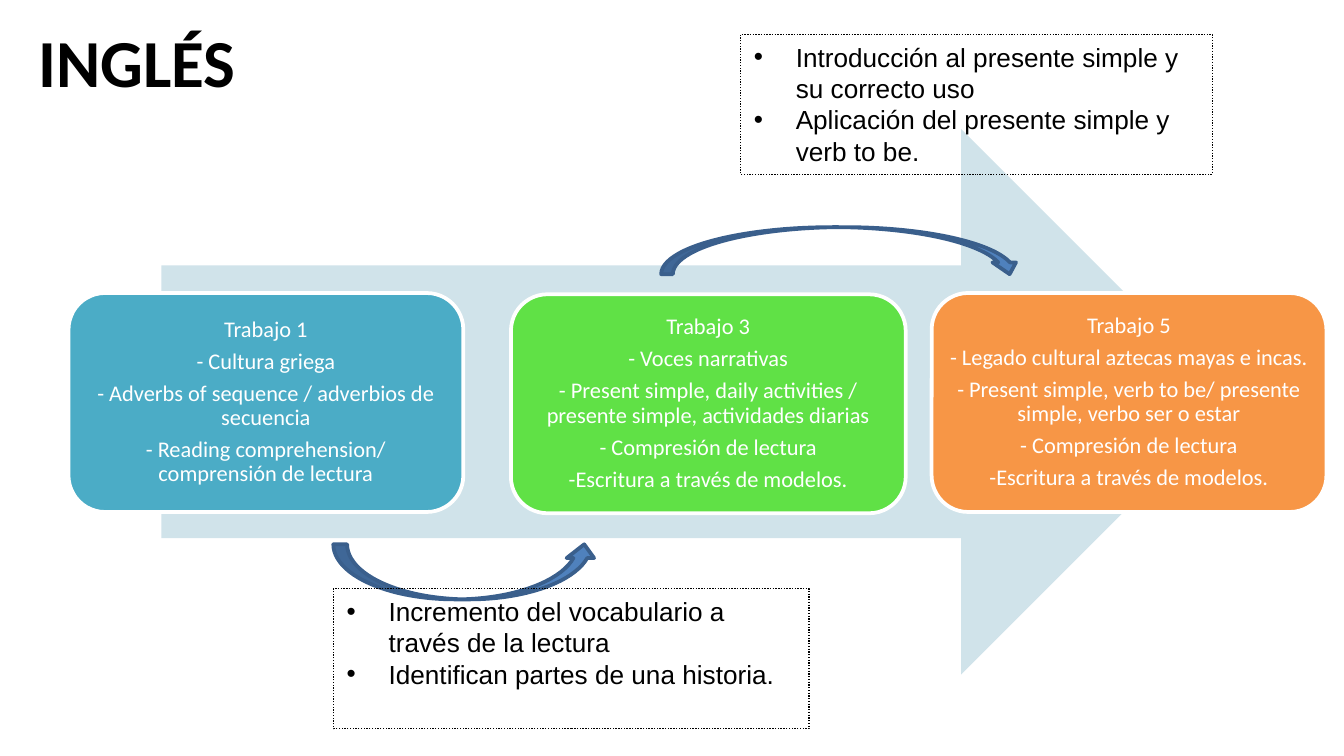
"""Builds the slide on the English course projects and how they connect."""
import pptx
import pptx.dml.color
import pptx.enum.dml
import pptx.enum.shapes
import pptx.enum.text
import pptx.oxml
import pptx.oxml.ns
import pptx.util

Pt = pptx.util.Pt
RGBColor = pptx.dml.color.RGBColor
Shape = pptx.enum.shapes.MSO_SHAPE
Align = pptx.enum.text.PP_ALIGN
Anchor = pptx.enum.text.MSO_ANCHOR

BLACK = RGBColor(0x00, 0x00, 0x00)
WHITE = RGBColor(0xFF, 0xFF, 0xFF)
PALE_BLUE = RGBColor(0xD0, 0xE3, 0xEA)
TEAL = RGBColor(0x4B, 0xAC, 0xC6)
GREEN = RGBColor(0x60, 0xE1, 0x46)
ORANGE = RGBColor(0xF7, 0x96, 0x46)
BLUE = RGBColor(0x4F, 0x81, 0xBD)
DARK_BLUE = RGBColor(0x3A, 0x5F, 0x8C)

CARD_WIDTH, CARD_HEIGHT = 211.5, 117.3
BULLET_INDENT = Pt(22.5)
TITLE_FONT = {"name": "Calibri", "size": Pt(36), "bold": True}
CARD_FONT = {"name": "Calibri", "size": Pt(12)}
NOTE_FONT = {"name": "Arial", "size": Pt(14)}
TITLE_FRAME = {"margin_left": Pt(23.5), "vertical_anchor": Anchor.MIDDLE, "word_wrap": True}
CARD_FRAME = {
    "margin_left": Pt(3.6), "margin_right": Pt(3.6),
    "margin_top": Pt(3.6), "margin_bottom": Pt(3.6),
    "vertical_anchor": Anchor.MIDDLE, "word_wrap": True,
}
NOTE_FRAME = {"vertical_anchor": Anchor.TOP, "word_wrap": True}
TITLE_PARA = {"alignment": Align.LEFT}
CARD_PARA = {"alignment": Align.CENTER, "line_spacing": 0.9, "space_after": Pt(4.2)}
NOTE_PARA = {"alignment": Align.LEFT, "line_spacing": Pt(16.8)}

CARDS = [
    (-49.7, 87.9, TEAL, [
        "Trabajo 1",
        "- Cultura griega",
        "- Adverbs of sequence / adverbios de secuencia",
        "- Reading comprehension/ comprensión de lectura",
    ]),
    (187.3, 88.6, GREEN, [
        "Trabajo 3",
        "- Voces narrativas",
        "- Present simple, daily activities / presente simple, actividades diarias",
        "- Compresión de lectura",
        "-Escritura a través de modelos.",
    ]),
    (412.7, 87.9, ORANGE, [
        "Trabajo 5",
        "- Legado cultural aztecas mayas e incas.",
        "- Present simple, verb to be/ presente simple, verbo ser o estar",
        "- Compresión de lectura",
        "-Escritura a través de modelos.",
    ]),
]
CURVES = [
    (Shape.CURVED_UP_ARROW, (178.6, 291.6, 141.8, 29.5)),
    (Shape.CURVED_DOWN_ARROW, (354.2, 121.7, 193, 25.2)),
]
NOTES = [
    ((396.7, 18.4, 252.7, 75), [
        "Introducción al presente simple y su correcto uso",
        "Aplicación del presente simple y verb to be.",
    ]),
    ((178.6, 315.4, 254.9, 75), [
        "Incremento del vocabulario a través de la lectura",
        "Identifican partes de una historia.",
    ]),
]


def apply_format(target, values):
    """Set every attribute in the dict on the target."""
    for name, value in values.items():
        setattr(target, name, value)


def write_text(frame, lines, frame_format, para_format, font_format, color):
    """Fill a text frame with one formatted paragraph per line."""
    apply_format(frame, frame_format)
    for index, line in enumerate(lines):
        para = frame.add_paragraph() if index else frame.paragraphs[0]
        apply_format(para, para_format)
        span = para.add_run()
        span.text = line
        apply_format(span.font, font_format)
        span.font.color.rgb = color


def add_bullet(para):
    """Give a paragraph a hanging round bullet."""
    properties = para._p.get_or_add_pPr()
    properties.set("marL", str(BULLET_INDENT))
    properties.set("indent", str(-BULLET_INDENT))
    namespace = pptx.oxml.ns.nsdecls("a")
    for tag in (
        f'<a:buFont {namespace} typeface="Arial"/>',
        f'<a:buChar {namespace} char="•"/>',
    ):
        properties.append(pptx.oxml.parse_xml(tag))


def add_shape(page, kind, box, fill=None, line=None, weight=2):
    """Add a flat preset shape in the box, given in points."""
    shape = page.shapes.add_shape(kind, *map(Pt, box))
    shape.shadow.inherit = False
    if fill is None:
        shape.fill.background()
    else:
        shape.fill.solid()
        shape.fill.fore_color.rgb = fill
    if line is None:
        shape.line.fill.background()
    else:
        shape.line.color.rgb = line
        shape.line.width = Pt(weight)
    return shape


def place_title(page, box, text):
    """Place the title placeholder in the box."""
    title = page.shapes.title
    apply_format(title, dict(zip(("left", "top", "width", "height"), map(Pt, box))))
    write_text(title.text_frame, [text], TITLE_FRAME, TITLE_PARA, TITLE_FONT, BLACK)


def place_process(page, box):
    """Draw the wide arrow in the box and its project cards over it."""
    left, top = box[:2]
    add_shape(page, Shape.RIGHT_ARROW, box, PALE_BLUE)
    for across, down, color, lines in CARDS:
        card_box = (left + across, top + down, CARD_WIDTH, CARD_HEIGHT)
        card = add_shape(page, Shape.ROUNDED_RECTANGLE, card_box, color, WHITE)
        write_text(card.text_frame, lines, CARD_FRAME, CARD_PARA, CARD_FONT, WHITE)


def place_note(page, box, lines):
    """Draw a dotted box with a bulleted list."""
    note = add_shape(page, Shape.RECTANGLE, box, line=BLACK, weight=0.75)
    note.line.dash_style = pptx.enum.dml.MSO_LINE.ROUND_DOT
    write_text(note.text_frame, lines, NOTE_FRAME, NOTE_PARA, NOTE_FONT, BLACK)
    for para in note.text_frame.paragraphs:
        add_bullet(para)


def main():
    """Build the deck and save it."""
    deck = pptx.Presentation()
    deck.slide_width, deck.slide_height = Pt(720), Pt(405)
    page = deck.slides.add_slide(deck.slide_layouts.get_by_name("Title Only"))
    place_title(page, (-2.9, -1.4, 648, 67.7), "INGLÉS")
    place_process(page, (86.4, 69.1, 574.6, 292.3))
    for kind, box in CURVES:
        add_shape(page, kind, box, BLUE, DARK_BLUE)
    for box, lines in NOTES:
        place_note(page, box, lines)
    deck.save("out.pptx")


if __name__ == "__main__":
    main()
